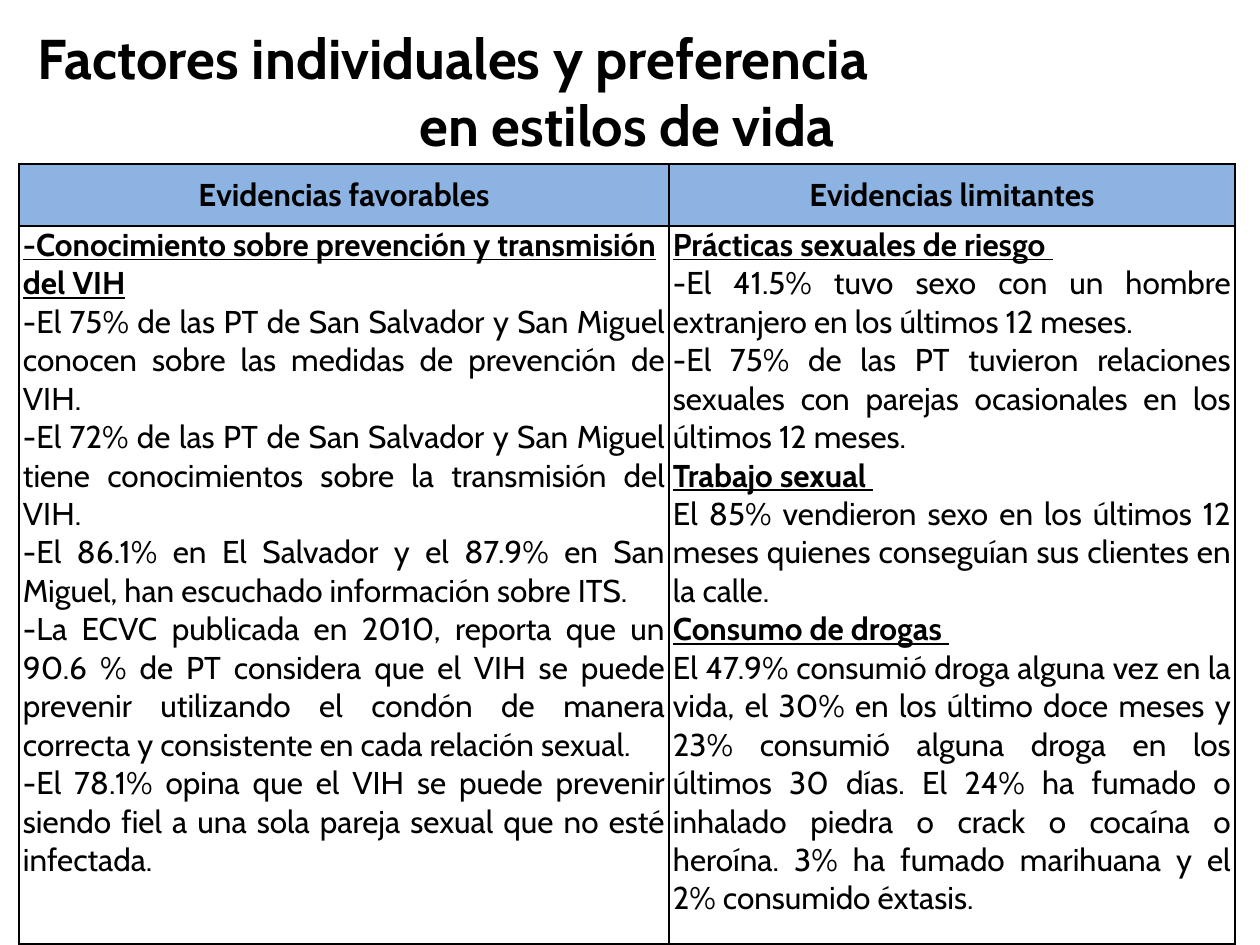
from dataclasses import dataclass

from lxml import etree
from pptx import Presentation
from pptx.dml.color import RGBColor
from pptx.enum.text import MSO_ANCHOR, MSO_AUTO_SIZE, PP_ALIGN
from pptx.oxml.ns import qn
from pptx.util import Pt

EMU_PER_PX = 914400 / 126
BLACK = RGBColor(0x00, 0x00, 0x00)
HEADER_BLUE = RGBColor(0x8D, 0xB3, 0xE2)
LEFT, CENTER, JUSTIFY = PP_ALIGN.LEFT, PP_ALIGN.CENTER, PP_ALIGN.JUSTIFY
TOP, MIDDLE = MSO_ANCHOR.TOP, MSO_ANCHOR.MIDDLE
NO_AUTOFIT = MSO_AUTO_SIZE.NONE
FONT = "Cabin"
COLUMN_WIDTHS = (650, 566)
ROW_HEIGHTS = (62, 718)
BORDER_TAGS = ("a:lnL", "a:lnR", "a:lnT", "a:lnB")


@dataclass(frozen=True)
class Line:
    text: str
    alignment: PP_ALIGN = JUSTIFY
    bold: bool = False
    underline: bool = False
    size: int = 18


@dataclass(frozen=True)
class Column:
    header: str
    lines: tuple[Line, ...]


def heading(text: str) -> Line:
    return Line(text, LEFT, bold=True, underline=True)


TITLE = (
    Line("Factores individuales y preferencia", LEFT, bold=True, size=32),
    Line("en estilos de vida", CENTER, bold=True, size=32),
)
COLUMNS = (
    Column("Evidencias favorables", (
        heading("-Conocimiento sobre prevención y transmisión del VIH"),
        Line("-El 75% de las PT de San Salvador y San Miguel conocen sobre las "
             "medidas de prevención de VIH."),
        Line("-El 72% de las PT de San Salvador y San Miguel tiene conocimientos "
             "sobre la transmisión del VIH."),
        Line("-El 86.1% en El Salvador y el 87.9% en San Miguel, han escuchado "
             "información sobre ITS."),
        Line("-La ECVC publicada en 2010, reporta que un 90.6 % de PT considera que "
             "el VIH se puede prevenir utilizando el condón de manera correcta y "
             "consistente en cada relación sexual."),
        Line("-El 78.1% opina que el VIH se puede prevenir siendo fiel a una sola "
             "pareja sexual que no esté infectada."),
    )),
    Column("Evidencias limitantes", (
        heading("Prácticas sexuales de riesgo "),
        Line("-El 41.5% tuvo sexo con un hombre extranjero en los últimos 12 meses."),
        Line("-El 75% de las PT tuvieron relaciones sexuales con parejas ocasionales "
             "en los últimos 12 meses."),
        heading("Trabajo sexual "),
        Line("El 85% vendieron sexo en los últimos 12 meses quienes conseguían sus "
             "clientes en la calle."),
        heading("Consumo de drogas "),
        Line("El 47.9% consumió droga alguna vez en la vida, el 30% en los último "
             "doce meses y 23% consumió alguna droga en los últimos 30 días. El 24% "
             "ha fumado o inhalado piedra o crack o cocaína o heroína. 3% ha fumado "
             "marihuana y el 2% consumido éxtasis."),
    )),
)


def px(length: int) -> int:
    return round(length * EMU_PER_PX)


def apply_format(target, values: dict) -> None:
    for name, value in values.items():
        setattr(target, name, value)


def write_lines(text_frame, lines: tuple[Line, ...]) -> None:
    for index, line in enumerate(lines):
        paragraph = text_frame.add_paragraph() if index else text_frame.paragraphs[0]
        paragraph.alignment = line.alignment
        run = paragraph.add_run()
        run.text = line.text
        apply_format(run.font, {
            "name": FONT, "size": Pt(line.size),
            "bold": line.bold, "underline": line.underline,
        })
        run.font.color.rgb = BLACK


def add_borders(cell) -> None:
    properties = cell._tc.get_or_add_tcPr()
    for index, tag in enumerate(BORDER_TAGS):
        border = etree.Element(qn(tag), w=str(Pt(1)))
        fill = etree.SubElement(border, qn("a:solidFill"))
        etree.SubElement(fill, qn("a:srgbClr"), val=str(BLACK))
        properties.insert(index, border)


def fill_cell(cell, lines: tuple[Line, ...], anchor: MSO_ANCHOR,
              color: RGBColor | None = None) -> None:
    apply_format(cell, {
        "margin_left": px(4), "margin_right": px(4),
        "margin_top": 0, "margin_bottom": 0, "vertical_anchor": anchor,
    })
    if color is None:
        cell.fill.background()
    else:
        cell.fill.solid()
        cell.fill.fore_color.rgb = color
    add_borders(cell)
    write_lines(cell.text_frame, lines)


def add_title(slide) -> None:
    title = slide.shapes.title
    apply_format(title, {
        "left": px(19), "top": px(16), "width": px(1216), "height": px(149),
    })
    apply_format(title.text_frame, {
        "word_wrap": True, "auto_size": NO_AUTOFIT, "vertical_anchor": MIDDLE,
        "margin_left": px(18), "margin_right": px(18),
    })
    write_lines(title.text_frame, TITLE)


def add_evidence_table(slide) -> None:
    table = slide.shapes.add_table(
        len(ROW_HEIGHTS), len(COLUMNS), px(19), px(164),
        px(sum(COLUMN_WIDTHS)), px(sum(ROW_HEIGHTS))).table
    apply_format(table, {"first_row": False, "horz_banding": False})
    for row, height in zip(table.rows, ROW_HEIGHTS):
        row.height = px(height)
    for index, (column, width) in enumerate(zip(COLUMNS, COLUMN_WIDTHS)):
        table.columns[index].width = px(width)
        header = (Line(column.header, CENTER, bold=True),)
        fill_cell(table.cell(0, index), header, MIDDLE, HEADER_BLUE)
        fill_cell(table.cell(1, index), column.lines, TOP)


def main() -> None:
    presentation = Presentation()
    apply_format(presentation, {"slide_width": px(1260), "slide_height": px(945)})
    slide = presentation.slides.add_slide(presentation.slide_layouts[5])
    add_evidence_table(slide)
    add_title(slide)
    presentation.save("out.pptx")


if __name__ == "__main__":
    main()
